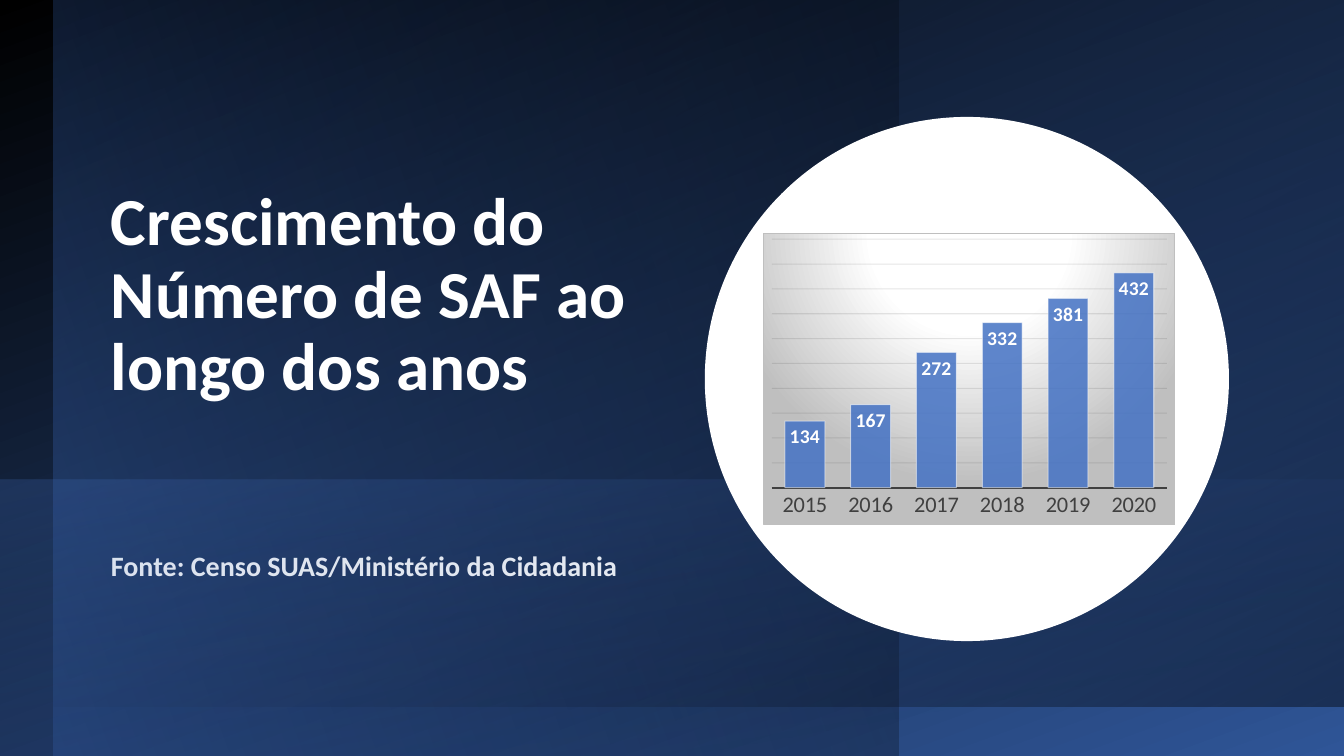
from dataclasses import dataclass

from pptx import Presentation
from pptx.chart.data import CategoryChartData
from pptx.dml.color import RGBColor
from pptx.enum.chart import XL_CHART_TYPE, XL_LABEL_POSITION, XL_TICK_LABEL_POSITION, XL_TICK_MARK
from pptx.enum.shapes import MSO_SHAPE
from pptx.enum.text import MSO_ANCHOR, MSO_AUTO_SIZE, PP_ALIGN
from pptx.oxml import parse_xml
from pptx.oxml.ns import nsdecls, qn
from pptx.util import Inches, Pt


@dataclass(frozen=True)
class Theme:
    """Colours, font and type sizes of the deck."""
    font: str = "Calibri"
    black: str = "000000"
    white: str = "FFFFFF"
    blue: str = "4472C4"
    deep_blue: str = "2F5597"
    navy: str = "203864"
    axis: str = "404040"
    grid: str = "0D0D0D"
    silver: str = "BFBFBF"
    title_size: int = 48
    source_size: int = 20
    axis_size: int = 16
    label_size: int = 14


THEME = Theme()


@dataclass(frozen=True)
class Box:
    """A rectangle divided into 100 columns and 100 rows."""
    left: int
    top: int
    width: int
    height: int

    def cells(self, column, row, columns, rows):
        """Return the box that covers the given grid cells."""
        return Box(self.left + int(self.width * column / 100),
                   self.top + int(self.height * row / 100),
                   int(self.width * columns / 100),
                   int(self.height * rows / 100))

    def upright(self):
        """Return the box turned by a quarter about its centre."""
        shift = (self.width - self.height) // 2
        return Box(self.left + shift, self.top - shift, self.height, self.width)

    def frame(self):
        """Return left, top, width and height."""
        return self.left, self.top, self.width, self.height


def rgb(color):
    """Turn a hex string into a colour."""
    return RGBColor.from_string(color)


def gradient(stops, direction):
    """Build a gradient fill from (position, colour, opacity) stops."""
    marks = "".join(
        f'<a:gs pos="{position * 1000}"><a:srgbClr val="{color}">'
        f'<a:alpha val="{opacity * 1000}"/></a:srgbClr></a:gs>'
        for position, color, opacity in stops)
    return (f'<a:gradFill {nsdecls("a")} rotWithShape="1">'
            f'<a:gsLst>{marks}</a:gsLst>{direction}</a:gradFill>')


def format_font(font, size, color, bold=False):
    """Apply the theme font with a size and colour."""
    font.name, font.size, font.bold = THEME.font, Pt(size), bold
    font.color.rgb = rgb(color)


def format_line(line, color, width):
    """Give a line its colour and width."""
    line.color.rgb = rgb(color)
    line.width = Pt(width)


def add_shade(page, box, stops, angle, rotation=0, flip=True):
    """Lay a gradient panel over the box."""
    placed = box.upright() if rotation % 180 else box
    shade = page.shapes.add_shape(MSO_SHAPE.RECTANGLE, *placed.frame())
    shade.shadow.inherit = False
    shade.line.fill.background()
    shade.fill.background()
    shade.rotation = rotation
    properties = shade.element.spPr
    if flip:
        properties.find(qn("a:xfrm")).set("flipH", "1")
    direction = f'<a:lin ang="{angle * 60000}" scaled="0"/>'
    properties.replace(properties.find(qn("a:noFill")), parse_xml(gradient(stops, direction)))
    return shade


def add_backdrop(page, box):
    """Stack the panels behind the title and return the top one."""
    add_shade(page, box, [(0, THEME.black, 100), (100, THEME.deep_blue, 100)], 110)
    add_shade(page, box.cells(3.98, 0, 62.87, 100),
              [(0, THEME.deep_blue, 45), (100, THEME.black, 29)], 200)
    return add_shade(page, box.cells(3.98, 0, 96.02, 93.47),
                     [(0, THEME.blue, 0), (100, THEME.black, 41)], 300, rotation=180)


def add_title(page, box, backdrop):
    """Place the title and its source line just above the backdrop."""
    title = page.shapes.title
    title.left, title.top, title.width, title.height = box.frame()
    backdrop.element.addnext(title.element)
    frame = title.text_frame
    frame.text = ("Crescimento do Número de SAF ao longo dos anos\n"
                  "Fonte: Censo SUAS/Ministério da Cidadania")
    frame.word_wrap = True
    frame.auto_size = MSO_AUTO_SIZE.NONE
    frame.vertical_anchor = MSO_ANCHOR.BOTTOM
    for para, size in zip(frame.paragraphs, (THEME.title_size, THEME.source_size)):
        para.alignment = PP_ALIGN.LEFT
        para.line_spacing = 0.9
        para.space_before = Pt(0)
        format_font(para.runs[0].font, size, THEME.white, bold=True)
    frame.paragraphs[-1].space_before = Pt(105)


def add_disc(page, box):
    """Draw the white disc that holds the chart."""
    disc = page.shapes.add_shape(MSO_SHAPE.OVAL, *box.frame())
    disc.shadow.inherit = False
    disc.fill.solid()
    disc.fill.fore_color.rgb = rgb(THEME.white)
    disc.line.fill.background()


def set_opacity(chart, query, percent):
    """Set the opacity of the chart colours that a query finds."""
    for color in chart.element.xpath(query):
        color.append(parse_xml(f'<a:alpha {nsdecls("a")} val="{percent * 1000}"/>'))


def add_chart_area(chart):
    """Give the chart its radial background and border."""
    stops = [(0, THEME.white, 100), (39, THEME.white, 100), (100, THEME.silver, 100)]
    direction = ('<a:path path="circle"><a:fillToRect l="50000" t="-80000" '
                 'r="50000" b="180000"/></a:path>')
    area = parse_xml(
        f'<c:spPr {nsdecls("c", "a")}>{gradient(stops, direction)}'
        f'<a:ln w="{Pt(0.75)}"><a:solidFill><a:srgbClr val="{THEME.silver}"/>'
        '</a:solidFill></a:ln></c:spPr>')
    chart.element.find(qn("c:chart")).addnext(area)


def add_growth_chart(page, box):
    """Plot the yearly number of SAF as columns."""
    data = CategoryChartData()
    data.categories = ["2015", "2016", "2017", "2018", "2019", "2020"]
    data.add_series("Series 1", (134, 167, 272, 332, 381, 432))
    chart = page.shapes.add_chart(XL_CHART_TYPE.COLUMN_CLUSTERED, *box.frame(), data).chart
    chart.has_legend = chart.has_title = False
    format_font(chart.font, 10, THEME.black)

    years = chart.category_axis
    years.major_tick_mark = years.minor_tick_mark = XL_TICK_MARK.NONE
    format_font(years.tick_labels.font, THEME.axis_size, THEME.axis)
    format_line(years.format.line, THEME.axis, 1.5)

    counts = chart.value_axis
    counts.minimum_scale, counts.maximum_scale, counts.major_unit = 0, 500, 50
    counts.tick_label_position = XL_TICK_LABEL_POSITION.NONE
    counts.visible = False
    counts.has_major_gridlines = True
    format_line(counts.major_gridlines.format.line, THEME.grid, 0.75)

    plot = chart.plots[0]
    plot.gap_width = 65
    plot.vary_by_categories = False
    columns = plot.series[0].format
    columns.fill.solid()
    columns.fill.fore_color.rgb = rgb(THEME.blue)
    format_line(columns.line, THEME.white, 0.75)
    plot.has_data_labels = True
    labels = plot.data_labels
    labels.show_value = True
    labels.position = XL_LABEL_POSITION.INSIDE_END
    format_font(labels.font, THEME.label_size, THEME.white, bold=True)

    set_opacity(chart, ".//c:ser/c:spPr/a:solidFill/a:srgbClr", 85)
    set_opacity(chart, ".//c:ser/c:spPr/a:ln//a:srgbClr", 50)
    set_opacity(chart, ".//c:majorGridlines//a:srgbClr", 10)
    add_chart_area(chart)


def build_chart_slide(deck, box):
    """Compose the slide from its backdrop, title and chart."""
    page = deck.slides.add_slide(deck.slide_layouts[5])
    add_title(page, box.cells(7.5, 22.13, 42.54, 55.6), add_backdrop(page, box))
    add_shade(page, box.cells(0, 63.47, 100, 36.53),
              [(0, THEME.blue, 24), (78, THEME.navy, 0)], 170, rotation=270, flip=False)
    disc = box.cells(52.44, 15.47, 39, 69.33)
    add_disc(page, disc)
    add_growth_chart(page, disc.cells(11.15, 22.12, 78.65, 55.77))


def main():
    """Build and save the deck."""
    deck = Presentation()
    deck.slide_width, deck.slide_height = Inches(13.33), Inches(7.5)
    build_chart_slide(deck, Box(0, 0, deck.slide_width, deck.slide_height))
    deck.save("out.pptx")


if __name__ == "__main__":
    main()
